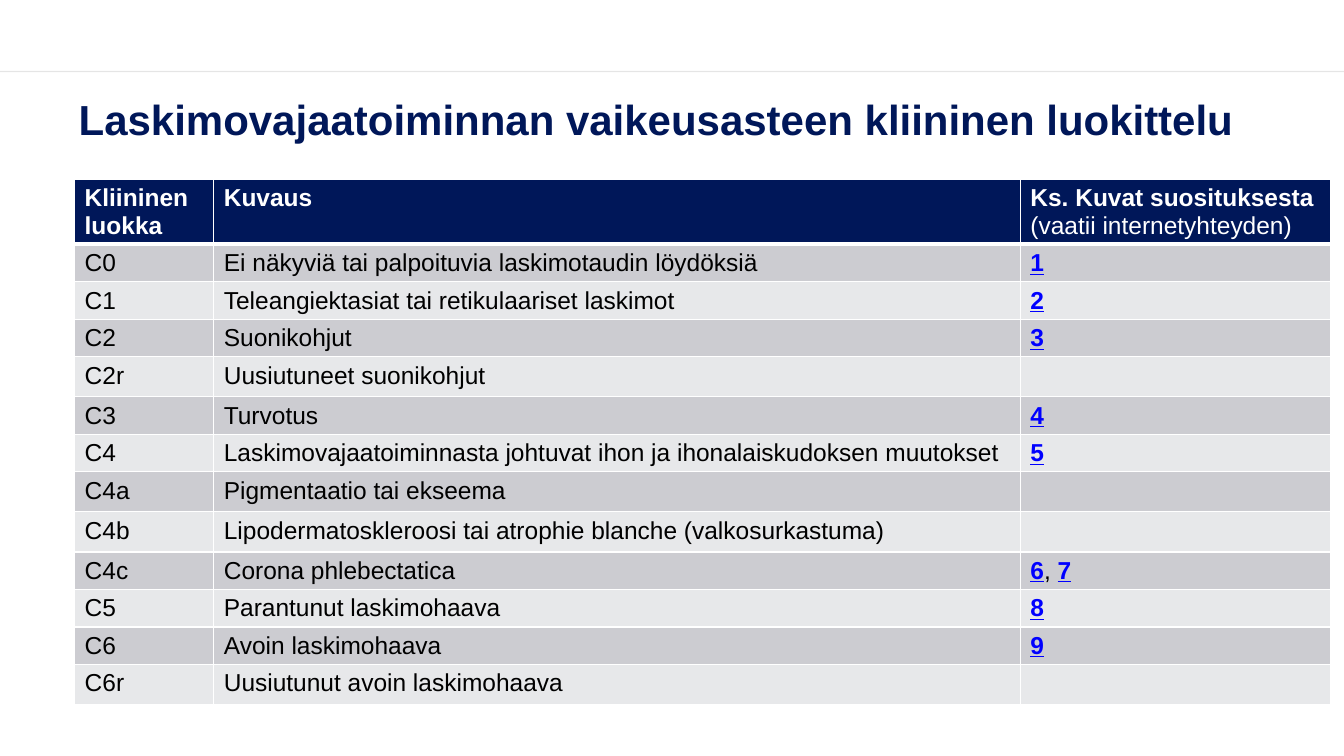
import pptx
import pptx.dml.color
import pptx.enum.shapes
import pptx.enum.text
import pptx.oxml.ns
import pptx.util
from dataclasses import dataclass
from lxml import etree

Inches, Pt = pptx.util.Inches, pptx.util.Pt
qn = pptx.oxml.ns.qn


@dataclass(frozen=True)
class Theme:
    font: str = "Arial"
    navy: str = "001759"
    white: str = "FFFFFF"
    black: str = "000000"
    link: str = "0000FF"
    bands: tuple = ("CCCCD1", "E7E8EA")
    title_size: float = 30
    table_size: float = 17.5


THEME = Theme()

TITLE = "Laskimovajaatoiminnan vaikeusasteen kliininen luokittelu"

# Class, description, figure numbers
CLASSES = [
    ("C0", "Ei näkyviä tai palpoituvia laskimotaudin löydöksiä", "1"),
    ("C1", "Teleangiektasiat tai retikulaariset laskimot", "2"),
    ("C2", "Suonikohjut", "3"),
    ("C2r", "Uusiutuneet suonikohjut", ""),
    ("C3", "Turvotus", "4"),
    ("C4", "Laskimovajaatoiminnasta johtuvat ihon ja ihonalaiskudoksen muutokset", "5"),
    ("C4a", "Pigmentaatio tai ekseema", ""),
    ("C4b", "Lipodermatoskleroosi tai atrophie blanche (valkosurkastuma)", ""),
    ("C4c", "Corona phlebectatica", "67"),
    ("C5", "Parantunut laskimohaava", "8"),
    ("C6", "Avoin laskimohaava", "9"),
    ("C6r", "Uusiutunut avoin laskimohaava", ""),
]

# Text formats: colour and font attributes
HEADER = (THEME.white, {"bold": True})
HEADER_NOTE = (THEME.white, {"bold": False})
BODY = (THEME.black, {"bold": False})
FIGURE = (THEME.link, {"bold": True, "underline": True})


def rgb(value):
    return pptx.dml.color.RGBColor.from_string(value)


def apply(target, values):
    for name, value in values.items():
        setattr(target, name, value)


def format_font(font, size, colour, values):
    apply(font, {"name": THEME.font, "size": Pt(size), **values})
    font.color.rgb = rgb(colour)


def add_solid_fill(parent, colour, alpha=None):
    fill = etree.SubElement(parent, qn("a:solidFill"))
    shade = etree.SubElement(fill, qn("a:srgbClr"), val=colour)
    if alpha is not None:
        etree.SubElement(shade, qn("a:alpha"), val=str(alpha * 1000))


def add_header_rule(slide, left, top, width):
    rule = slide.shapes.add_connector(
        pptx.enum.shapes.MSO_CONNECTOR.STRAIGHT,
        Inches(left), Inches(top), Inches(left + width), Inches(top))
    rule.line.width = Pt(1)
    outline = rule.line._get_or_add_ln()
    add_solid_fill(outline, THEME.black, alpha=10)
    etree.SubElement(rule._element.spPr, qn("a:effectLst"))


def add_title(slide, left, top, width, height):
    title = slide.shapes.title
    apply(title, {"left": Inches(left), "top": Inches(top),
                  "width": Inches(width), "height": Inches(height)})
    frame = title.text_frame
    apply(frame, {"text": TITLE, "word_wrap": True,
                  "auto_size": pptx.enum.text.MSO_AUTO_SIZE.NONE,
                  "vertical_anchor": pptx.enum.text.MSO_ANCHOR.MIDDLE})
    heading = frame.paragraphs[0]
    apply(heading, {"alignment": pptx.enum.text.PP_ALIGN.LEFT, "line_spacing": 0.9})
    format_font(heading.runs[0].font, THEME.title_size, THEME.navy, {"bold": True})


def fill_cell(cell, pieces, colour, top_width, bottom_width):
    apply(cell, {"margin_left": Inches(0.1), "margin_right": Inches(0.1),
                 "margin_top": Inches(0.05), "margin_bottom": Inches(0.05)})
    # Borders come before the fill
    properties = cell._tc.get_or_add_tcPr()
    for side, width in {"L": 1, "R": 1, "T": top_width, "B": bottom_width}.items():
        border = etree.SubElement(properties, qn(f"a:ln{side}"), w=str(Pt(width)))
        add_solid_fill(border, THEME.white)
    cell.fill.solid()
    cell.fill.fore_color.rgb = rgb(colour)

    paragraph = cell.text_frame.paragraphs[0]
    for text, (text_colour, values) in pieces:
        for index, line in enumerate(text.split("\n")):
            if index:
                paragraph.add_line_break()
            run = paragraph.add_run()
            run.text = line
            format_font(run.font, THEME.table_size, text_colour, values)
    if not pieces:
        etree.SubElement(paragraph._p, qn("a:endParaRPr"),
                         sz=str(int(THEME.table_size * 100)))


def figure_pieces(figures):
    pieces = []
    for figure in figures:
        if pieces:
            pieces.append((", ", BODY))
        pieces.append((figure, FIGURE))
    return pieces


def add_classification(slide, left, top, widths, header_height, row_height):
    rows = [[[("Kliininen \nluokka", HEADER)], [("Kuvaus", HEADER)],
             [("Ks. Kuvat suosituksesta ", HEADER),
              ("(vaatii internetyhteyden)", HEADER_NOTE)]]]
    rows += [[[(code, BODY)], [(description, BODY)], figure_pieces(figures)]
             for code, description, figures in CLASSES]
    heights = [header_height] + [row_height] * len(CLASSES)
    table = slide.shapes.add_table(
        len(rows), len(widths), Inches(left), Inches(top),
        Inches(sum(widths)), Inches(sum(heights))).table
    for column, width in zip(table.columns, widths):
        column.width = Inches(width)
    for r, (row, height) in enumerate(zip(rows, heights)):
        table.rows[r].height = Inches(height)
        colour = THEME.bands[(r - 1) % 2] if r else THEME.navy
        for c, pieces in enumerate(row):
            fill_cell(table.cell(r, c), pieces, colour,
                      top_width=3 if r == 1 else 1, bottom_width=1 if r else 3)


def main():
    deck = pptx.Presentation()
    apply(deck, {"slide_width": Inches(13.33), "slide_height": Inches(7.5)})
    slide = deck.slides.add_slide(deck.slide_layouts[5])
    add_header_rule(slide, 0, 0.71, 13.33)
    add_title(slide, 0.68, 0.93, 11.94, 0.56)
    add_classification(slide, 0.74, 1.78, (1.38, 8, 3.08), 0.64, 0.37)
    deck.save("out.pptx")


if __name__ == "__main__":
    main()
